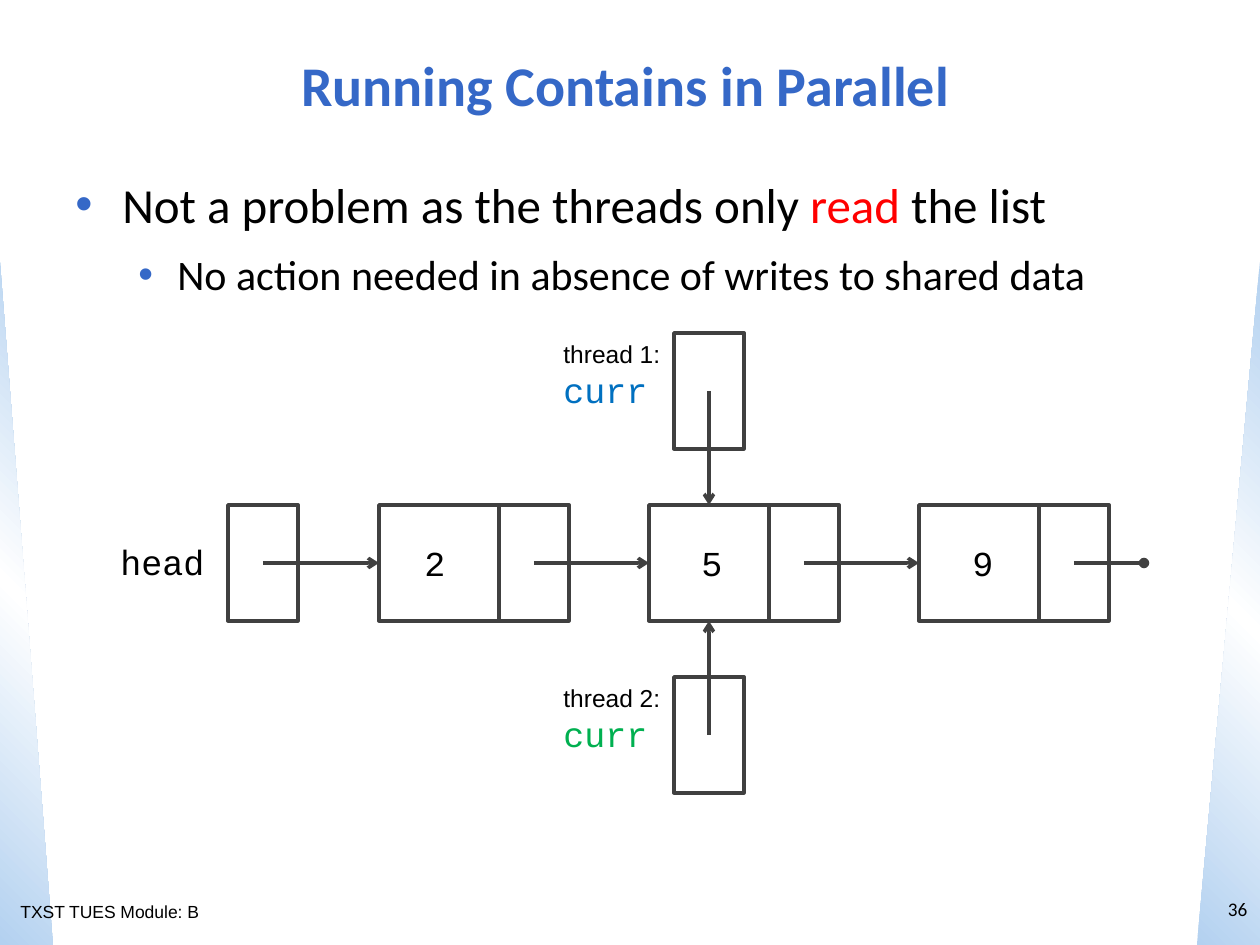
from pptx import Presentation
from pptx.dml.color import RGBColor
from pptx.enum.shapes import MSO_CONNECTOR, MSO_SHAPE
from pptx.enum.text import MSO_ANCHOR as Anchor, MSO_AUTO_SIZE as AutoSize, PP_ALIGN as Align
from pptx.oxml.ns import qn
from pptx.util import Pt
from lxml.etree import SubElement

PX = 914400 / 126  # EMU in one px
BLUE, BLACK, GRAY, RED = "3568C7", "000000", "404040", "FF0000"
PALE, WHITE = "B3D1F0", "FFFFFF"
TOP, SIDE = 0, 1
BOTTOM = 2


def emu(*lengths):
    return [round(length * PX) for length in lengths]


def color(hex_string):
    return RGBColor.from_string(hex_string)


def write(paragraph, text, size, font="Calibri", ink=BLACK, bold=False):
    run = paragraph.add_run()
    run.text = text
    run.font.size = Pt(size)
    run.font.name = font
    run.font.bold = bold
    run.font.color.rgb = color(ink)


def add_bullet(paragraph, margin, indent):
    properties = paragraph._p.get_or_add_pPr()
    left, first = emu(margin, indent)
    properties.set("marL", str(left))
    properties.set("indent", str(first))
    bullet_color = SubElement(properties, qn("a:buClr"))
    SubElement(bullet_color, qn("a:srgbClr"), val=BLUE)
    SubElement(properties, qn("a:buFont"), typeface="Arial")
    SubElement(properties, qn("a:buChar"), char="•")


class SlideBuilder:
    def __init__(self, slide):
        self.slide = slide
        self.shapes = slide.shapes

    def text_frame(self, x, y, width, height, wrap=True, grow=False, anchor=Anchor.TOP):
        frame = self.shapes.add_textbox(*emu(x, y, width, height)).text_frame
        frame.word_wrap = wrap
        frame.auto_size = AutoSize.SHAPE_TO_FIT_TEXT if grow else AutoSize.NONE
        frame.vertical_anchor = anchor
        return frame

    def text(self, text, x, y, width, height, size, align=Align.LEFT,
             wrap=True, grow=False, anchor=Anchor.TOP, **style):
        frame = self.text_frame(x, y, width, height, wrap, grow, anchor)
        frame.paragraphs[0].alignment = align
        write(frame.paragraphs[0], text, size, **style)
        return frame

    def code(self, text, x, y, width):
        self.text(text, x, y, width, 55, 20, font="Courier New", wrap=False, grow=True)

    def bullets(self, x, y, width, height, items):
        """Each item is (level, margin, indent, size, [(text, ink), ...])."""
        frame = self.text_frame(x, y, width, height)
        for index, (level, margin, indent, size, runs) in enumerate(items):
            paragraph = frame.add_paragraph() if index else frame.paragraphs[0]
            paragraph.level = level
            add_bullet(paragraph, margin, indent)
            if index:
                paragraph.space_before = Pt(9)
            for text, ink in runs:
                write(paragraph, text, size, ink=ink)

    def side_wedge(self, x, width, angle, flipped=False):
        wedge = self.shapes.add_shape(MSO_SHAPE.RIGHT_TRIANGLE, *emu(x, 262, width, 683))
        wedge.shadow.inherit = False
        wedge.line.fill.background()
        wedge.fill.gradient()
        wedge.fill.gradient_angle = angle
        stop_list = wedge.fill._fill._gradFill.find(qn("a:gsLst"))
        for stop in list(stop_list):
            stop_list.remove(stop)
        for percent, tint in ((0, PALE), (50, WHITE), (100, PALE)):
            stop = SubElement(stop_list, qn("a:gs"), pos=str(percent * 1000))
            SubElement(stop, qn("a:srgbClr"), val=tint)
        if flipped:
            wedge._element.spPr.find(qn("a:xfrm")).set("flipH", "1")

    def box(self, x, y, width):
        box = self.shapes.add_shape(MSO_SHAPE.RECTANGLE, *emu(x, y, width, CELL_H))
        box.shadow.inherit = False
        box.fill.background()
        box.line.color.rgb = color(GRAY)
        box.line.width = Pt(2)
        return box

    def pointer(self, x1, y1, x2, y2, target=None, site=SIDE, tip="arrow"):
        line = self.shapes.add_connector(MSO_CONNECTOR.STRAIGHT, *emu(x1, y1, x2, y2))
        line.line.color.rgb = color(GRAY)
        line.line.width = Pt(2)
        SubElement(line.line._get_or_add_ln(), qn("a:tailEnd"), type=tip)
        SubElement(line._element.spPr, qn("a:effectLst"))
        if target is not None:
            line.end_connect(target, site)


CELL_H, POINTER_W, VALUE_W = 116, 70, 120
LIST_Y, HEAD_X, NODE_X, NODE_STEP = 505, 228, 379, 270
MIDDLE_Y = LIST_Y + CELL_H // 2
THREAD_X = NODE_X + NODE_STEP + (VALUE_W - POINTER_W) // 2


def draw_list(page):
    """Draw head and the linked nodes; return the value boxes."""
    page.code("head", 108, 534, 111)
    page.box(HEAD_X, LIST_Y, POINTER_W)
    start_x = HEAD_X + POINTER_W // 2
    nodes = []
    for index, (value, value_x) in enumerate((("2", 412), ("5", 689), ("9", 960))):
        x = NODE_X + index * NODE_STEP
        node = page.box(x, LIST_Y, VALUE_W)
        page.box(x + VALUE_W, LIST_Y, POINTER_W)
        page.code(value, value_x, 535, 47)
        page.pointer(start_x, MIDDLE_Y, x, MIDDLE_Y, node)
        start_x = x + VALUE_W + POINTER_W // 2
        nodes.append(node)
    page.pointer(start_x, MIDDLE_Y, start_x + 70, MIDDLE_Y, tip="oval")
    return nodes


def draw_thread(page, label, ink, y, node, site, node_y):
    page.box(THREAD_X, y, POINTER_W)
    center_x = THREAD_X + POINTER_W // 2
    page.pointer(center_x, y + CELL_H // 2, center_x, node_y, node, site)
    frame = page.text(label, 551, y, 122, 84, 14, font="Arial", wrap=False, grow=True)
    write(frame.add_paragraph(), "curr", 20, "Courier New", ink)


def main():
    deck = Presentation()
    deck.slide_width, deck.slide_height = emu(1260, 945)
    page = SlideBuilder(deck.slides.add_slide(deck.slide_layouts[6]))

    page.side_wedge(0, 53, 45)
    page.side_wedge(1197, 63, 315, flipped=True)
    page.text("TXST TUES Module: B", 8, 895, 220, 34, 10, font="Arial", grow=True)
    page.text("Running Contains in Parallel", 32, 32, 1187, 105, 32, Align.CENTER,
              anchor=Anchor.MIDDLE, ink=BLUE, bold=True)
    page.bullets(63, 168, 1155, 703, [
        (0, 47, -47, 28, [("Not a problem as the threads only ", BLACK),
                          ("read", RED), (" the list", BLACK)]),
        (1, 102, -39, 24, [("No action needed in absence of writes to shared data", BLACK)]),
    ])
    page.text("36", 1197, 872, 63, 73, 11, Align.RIGHT, anchor=Anchor.MIDDLE)

    shared_node = draw_list(page)[1]
    draw_thread(page, "thread 1:", "0070C0", 333, shared_node, TOP, LIST_Y)
    draw_thread(page, "thread 2:", "00B050", 677, shared_node, BOTTOM, LIST_Y + CELL_H)

    deck.save("out.pptx")


if __name__ == "__main__":
    main()
